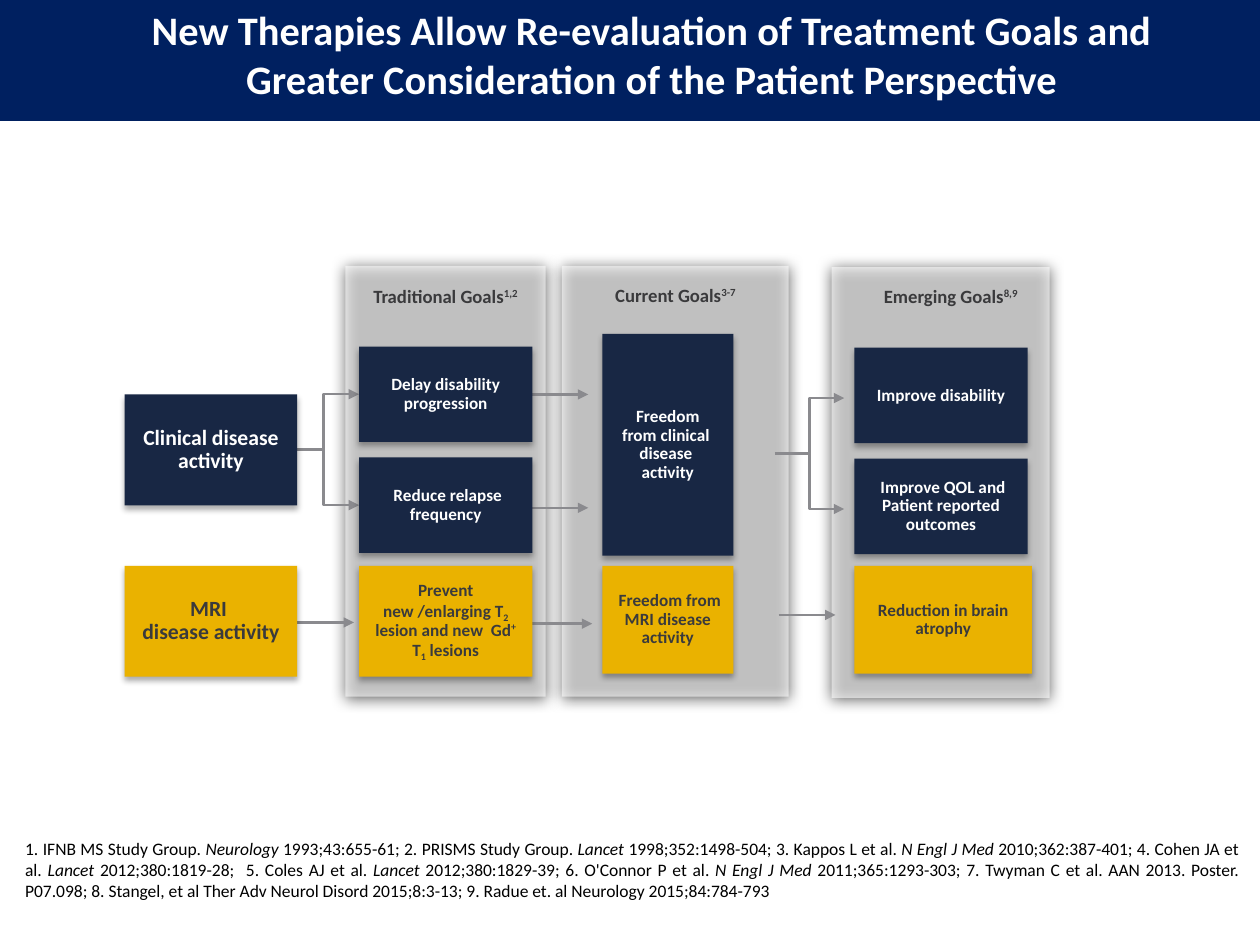
import pptx
import pptx.util
import pptx.dml.color
import pptx.enum.shapes
import pptx.enum.text
import pptx.oxml
import pptx.oxml.ns
import lxml.etree

Pt = pptx.util.Pt
RGB = pptx.dml.color.RGBColor.from_string
ALIGN = pptx.enum.text.PP_ALIGN
ANCHOR = pptx.enum.text.MSO_ANCHOR
RECTANGLE = pptx.enum.shapes.MSO_SHAPE.RECTANGLE
CONNECTOR = pptx.enum.shapes.MSO_CONNECTOR
qn = pptx.oxml.ns.qn

COLORS = {
    "band": "002060", "white": "FFFFFF", "black": "000000",
    "navy": "182744", "gold": "EAB200", "dark": "3A3A3C", "arrow": "8A8A8E",
}
BASELINES = {"super": "30000", "sub": "-25000"}


def write_text(shape, *paragraphs, size, color, bold=False, align=ALIGN.CENTER,
               anchor=ANCHOR.MIDDLE, margins=(6.5, 3.25), spacing=None):
    """Each paragraph is a list of (text, style) runs; a newline is a line break."""
    frame = shape.text_frame
    frame.word_wrap = True
    frame.vertical_anchor = anchor
    frame.margin_left = frame.margin_right = Pt(margins[0])
    frame.margin_top = frame.margin_bottom = Pt(margins[1])
    for index, runs in enumerate(paragraphs):
        paragraph = frame.add_paragraph() if index else frame.paragraphs[0]
        paragraph.alignment = align
        if spacing:
            paragraph.line_spacing = spacing
        for text, style in runs:
            for number, line in enumerate(text.split("\n")):
                if number:
                    paragraph.add_line_break()
                run = paragraph.add_run()
                run.text = line
                run.font.name = "Calibri"
                run.font.size = Pt(size)
                run.font.bold = bold
                run.font.italic = style == "italic"
                run.font.color.rgb = RGB(COLORS[color])
                if style in BASELINES:
                    run._r.get_or_add_rPr().set("baseline", BASELINES[style])


def add_rectangle(left, top, width, height, color, shadow=None, opacity=None):
    """shadow is (opacity in percent, blur, distance); it falls straight down."""
    shape = slide.shapes.add_shape(RECTANGLE, Pt(left), Pt(top), Pt(width), Pt(height))
    shape.shadow.inherit = False
    shape.fill.solid()
    shape.fill.fore_color.rgb = RGB(COLORS[color])
    shape.line.fill.background()
    properties = shape._element.spPr
    if opacity:
        fill_color = properties.find(qn("a:solidFill")).find(qn("a:srgbClr"))
        lxml.etree.SubElement(fill_color, qn("a:alpha"), val=str(opacity * 1000))
    if shadow:
        strength, blur, distance = shadow
        outer = lxml.etree.SubElement(
            properties.find(qn("a:effectLst")), qn("a:outerShdw"), blurRad=str(Pt(blur)),
            dist=str(Pt(distance)), dir="5400000", algn="ctr", rotWithShape="0")
        shadow_color = lxml.etree.SubElement(outer, qn("a:srgbClr"), val=COLORS["black"])
        lxml.etree.SubElement(shadow_color, qn("a:alpha"), val=str(strength * 1000))
    return shape


presentation = pptx.Presentation()
presentation.slide_width = Pt(720)
presentation.slide_height = Pt(540)
slide = presentation.slides.add_slide(presentation.slide_layouts[6])

# Title band
add_rectangle(0, -2.9, 720, 72, "band")
title = slide.shapes.add_textbox(Pt(72), Pt(3.6), Pt(601.2), Pt(58.3))
write_text(title, [("New Therapies Allow Re-evaluation of Treatment Goals and "
                    "Greater Consideration of the Patient Perspective", "")],
           size=23.1, color="white", bold=True, anchor=ANCHOR.BOTTOM, margins=(7.2, 3.6))

# References
references = slide.shapes.add_textbox(Pt(14.4), Pt(449.3), Pt(693.4), Pt(65.5))
write_text(references, [
    ("1. IFNB MS Study Group. ", ""), ("Neurology", "italic"),
    (" 1993;43:655-61; 2. PRISMS Study Group. ", ""), ("Lancet ", "italic"),
    ("1998;352:1498-504; 3. Kappos L et al. ", ""), ("N Engl J Med", "italic"),
    (" 2010;362:387-401; 4. Cohen JA et al. ", ""), ("Lancet ", "italic"),
    ("2012;380:1819-28;  5. Coles AJ et al. ", ""), ("Lancet", "italic"),
    (" 2012;380:1829-39; 6. O'Connor P et al. ", ""), ("N Engl J Med", "italic"),
    (" 2011;365:1293-303; 7. Twyman C et al. AAN 2013. Poster. P07.098; "
     "8. Stangel, et al Ther Adv Neurol Disord 2015;8:3-13; "
     "9. Radue et. al Neurology 2015;84:784-793 ", ""),
], size=10, color="black", align=ALIGN.JUSTIFY, anchor=ANCHOR.BOTTOM, margins=(0, 0))

# Goal panels with headings: panel left, top, width; heading left, top, width
panels = [
    (321.1, 151.9, 129.6, 337, 160.6, 97.9, "Current Goals", "3-7"),
    (197.3, 151.9, 114.5, 197.3, 161.3, 114.5, "Traditional Goals", "1,2"),
    (475.2, 152.6, 124.6, 486, 161.3, 114.5, "Emerging Goals", "8,9"),
]
for left, top, width, text_left, text_top, text_width, heading, sources in panels:
    add_rectangle(left, top, width, 246.2, "white", shadow=(100, 8.5, 1), opacity=58)
    label = slide.shapes.add_textbox(Pt(text_left), Pt(text_top), Pt(text_width), Pt(18))
    write_text(label, [(heading, ""), (sources, "super")], size=10.7, color="dark",
               bold=True, anchor=ANCHOR.TOP, margins=(0, 2.9), spacing=0.9)

# Arrows: forks first, so that the boxes cover their ends
forks = [(164.9, 257, 205.2), (442.8, 259.2, 482.4)]
arrows = [(CONNECTOR.ELBOW, left, middle, right, middle + offset)
          for left, middle, right in forks for offset in (-31.7, 31.7)]
arrows += [(CONNECTOR.STRAIGHT, left, y, right, y) for left, y, right in [
    (169.9, 355.7, 202.3), (303.8, 356.4, 338.4), (303.8, 290.2, 336.2),
    (303.8, 225.4, 336.2), (445, 351.4, 477.4)]]
for kind, left, start, right, end in arrows:
    arrow = slide.shapes.add_connector(kind, Pt(left), Pt(start), Pt(right), Pt(end))
    arrow.line.color.rgb = RGB(COLORS["arrow"])
    arrow.line.width = Pt(1.5)
    lxml.etree.SubElement(arrow.line._get_or_add_ln(), qn("a:tailEnd"), type="triangle")
    lxml.etree.SubElement(arrow._element.spPr, qn("a:effectLst"))

# Boxes: left, top, width, height, fill, text size, side margin, paragraphs
prevent = [
    [("Prevent", "")],
    [("new /enlarging T", ""), ("2", "sub"), (" lesion and new  Gd", ""),
     ("+", "super"), (" T", ""), ("1", "sub"), (" lesions", "")],
]
boxes = [
    (71.3, 225.4, 98.6, 63.4, "navy", 12.4, 6.5, [[("Clinical disease activity", "")]]),
    (71.3, 323.3, 98.6, 63.4, "gold", 12.4, 6.5, [[("MRI \ndisease activity", "")]]),
    (205.2, 198, 99, 54.5, "navy", 9.8, 6.5, [[("Delay disability progression", "")]]),
    (205.2, 261.4, 99, 54.5, "navy", 9.8, 6.5, [[(" Reduce relapse frequency", "")]]),
    (205.2, 323.3, 99, 63.4, "gold", 9.8, 6.5, prevent),
    (344.2, 190.8, 74.9, 126.7, "navy", 9.8, 0.7,
     [[(" Freedom \nfrom clinical \ndisease \nactivity", "")]]),
    (344.2, 323.3, 74.9, 61.7, "gold", 9.8, 0.7,
     [[(" Freedom from MRI disease activity", "")]]),
    (488.2, 198.7, 99, 54.5, "navy", 9.8, 6.5, [[("Improve disability", "")]]),
    (488.2, 262.1, 99, 54.5, "navy", 9.8, 6.5,
     [[(" Improve QOL and Patient reported outcomes", "")]]),
    (488.2, 323.3, 101.5, 61.7, "gold", 9.8, 6.5, [[("Reduction in brain atrophy", "")]]),
]
for left, top, width, height, fill, size, margin, paragraphs in boxes:
    box = add_rectangle(left, top, width, height, fill, shadow=(32, 3.5, 2.2))
    write_text(box, *paragraphs, size=size, color="white" if fill == "navy" else "dark",
               bold=True, margins=(margin, 2.9), spacing=0.9)

presentation.save("out.pptx")
